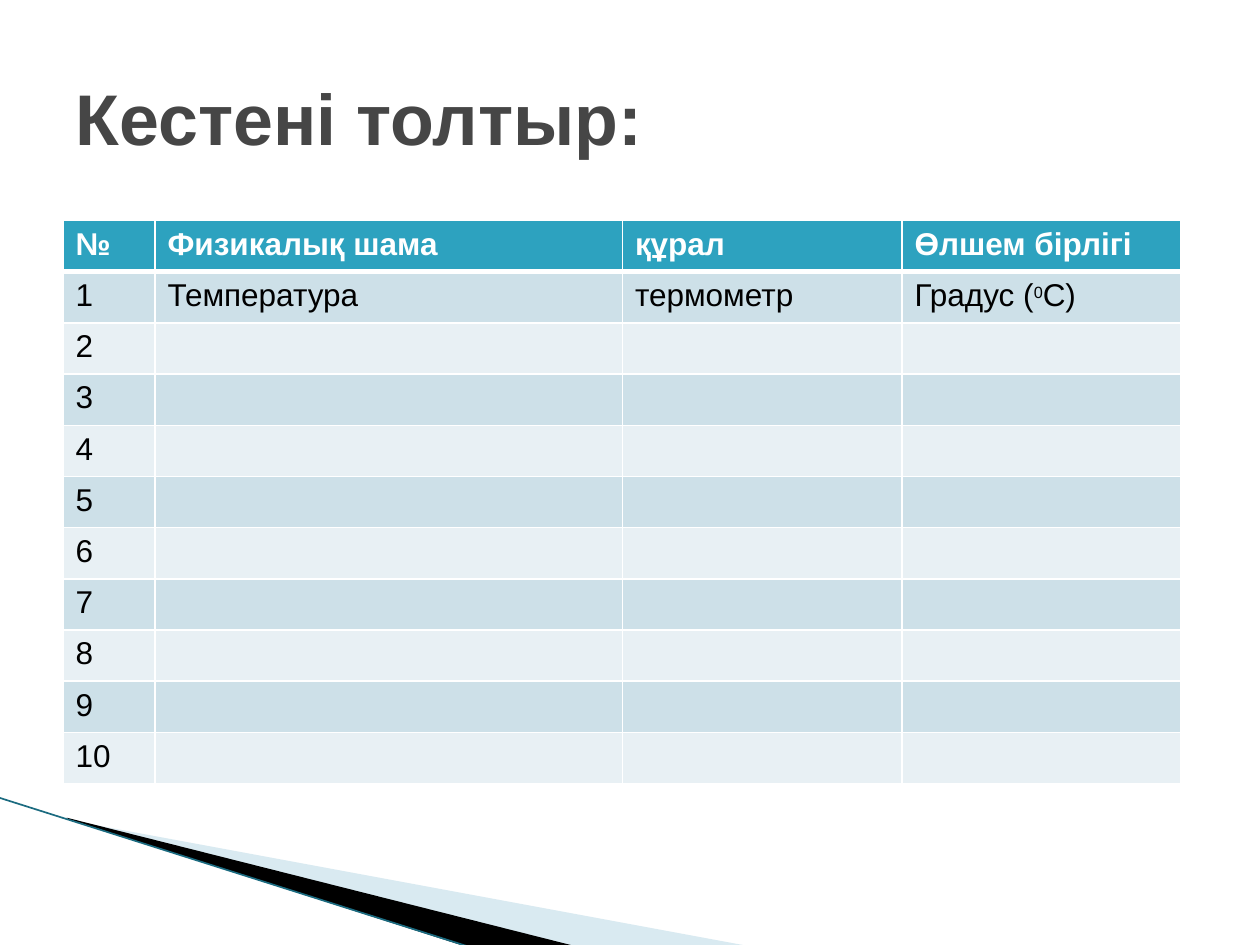
from lxml.etree import SubElement
from pptx import Presentation
from pptx.dml.color import RGBColor
from pptx.enum.shapes import MSO_CONNECTOR
from pptx.enum.text import MSO_ANCHOR, PP_ALIGN
from pptx.oxml.ns import qn
from pptx.util import Inches, Pt

# Content
TITLE = "Кестені толтыр:"
HEADER = ["№", "Физикалық шама", "құрал", "Өлшем бірлігі"]
DEGREES = ["Градус (", ("0", "super"), "С)"]
ROWS = [["1", "Температура", "термометр", DEGREES]]
ROWS += [[str(n), "", "", ""] for n in range(2, 11)]

# Theme and geometry (inches)
THEME = {
    "font": "Arial",
    "title": {"size": Pt(41), "bold": True, "color": "464646"},
    "header": {"size": Pt(18), "bold": True, "color": "FFFFFF"},
    "body": {"size": Pt(18), "bold": False, "color": "000000"},
    "super": {"size": Pt(16), "bold": False, "color": "000000"},
    "header_fill": "2DA2BF",
    "bands": ["CDE0E8", "E8F0F4"],
    "border": "FFFFFF",
    "edge": "1B6B80",
}
TITLE_BOX = (0.5, 0.3, 9, 1.25)
TABLE_BOX = (0.5, 1.75, 8.87, 4.47)
COLUMNS = [0.73, 3.71, 2.22, 2.21]
WEDGES = [  # frame, points, colour, opacity in percent
    ((0.78, 5.47, 4.16, 1.58),
     [(0.55, 6.51), (5.95, 7.51), (4.56, 7.51), (0.55, 6.5)], "A0CBDC", 40),
    ((-0.06, 6.33, 4.16, 0.92),
     [(0.53, 6.49), (4.57, 7.51), (3.72, 7.52), (0.54, 6.5)], "000000", 100),
]
EDGE = (-0.01, 6.33, 3.71, 7.51)


def box(values):
    return [Inches(v) for v in values]


def place(shape, values):
    shape.left, shape.top, shape.width, shape.height = box(values)


def format_font(font, style):
    font.name = THEME["font"]
    for name, value in THEME[style].items():
        if name == "color":
            font.color.rgb = RGBColor.from_string(value)
        else:
            setattr(font, name, value)


def set_borders(cell, widths):
    tc_pr = cell._tc.get_or_add_tcPr()
    for side in "LRTB":
        ln = SubElement(tc_pr, qn(f"a:ln{side}"), w=str(Pt(widths.get(side, 1))))
        fill = SubElement(ln, qn("a:solidFill"))
        SubElement(fill, qn("a:srgbClr"), val=THEME["border"])


def fill_cell(cell, content, style, color, widths):
    set_borders(cell, widths)
    cell.fill.solid()
    cell.fill.fore_color.rgb = RGBColor.from_string(color)
    p = cell.text_frame.paragraphs[0]
    format_font(p.font, style)
    for part in content if isinstance(content, list) else [content]:
        text, run_style = part if isinstance(part, tuple) else (part, style)
        if text:
            r = p.add_run()
            r.text = text
            format_font(r.font, run_style)
            if run_style == "super":
                r.font._element.set("baseline", "30000")


def set_frame(sp, frame):
    """Move the frame while the outline, which reaches beyond it, stays put."""
    dx, dy = sp.left - Inches(frame[0]), sp.top - Inches(frame[1])
    place(sp, frame)
    outline = next(sp._element.iter(qn("a:path")))
    outline.set("w", str(sp.width))
    outline.set("h", str(sp.height))
    for pt in outline.iter(qn("a:pt")):
        pt.set("x", str(int(pt.get("x")) + dx))
        pt.set("y", str(int(pt.get("y")) + dy))


def add_wedge(s, frame, points, color, opacity):
    start, *rest = [box(point) for point in points]
    builder = s.shapes.build_freeform(*start)
    builder.add_line_segments(rest, close=True)
    sp = builder.convert_to_shape()
    set_frame(sp, frame)
    sp.shadow.inherit = False
    sp.line.fill.background()
    sp.fill.solid()
    sp.fill.fore_color.rgb = RGBColor.from_string(color)
    if opacity < 100:
        clr = sp._element.spPr.find(qn("a:solidFill"))[0]
        SubElement(clr, qn("a:alpha"), val=str(opacity * 1000))


def main():
    prs = Presentation()
    prs.slide_width, prs.slide_height = box((10, 7.5))
    s = prs.slides.add_slide(prs.slide_layouts[5])

    # Corner decoration
    for wedge in WEDGES:
        add_wedge(s, *wedge)
    line = s.shapes.add_connector(MSO_CONNECTOR.STRAIGHT, *box(EDGE))
    line.line.color.rgb = RGBColor.from_string(THEME["edge"])
    line.line.width = Pt(0.95)
    SubElement(line._element.spPr, qn("a:effectLst"))

    # Table
    rows = [HEADER] + ROWS
    table = s.shapes.add_table(len(rows), len(COLUMNS), *box(TABLE_BOX)).table
    for column, width in zip(table.columns, COLUMNS):
        column.width = Inches(width)
    for i, row in enumerate(rows):
        style = "body" if i else "header"
        color = THEME["bands"][(i - 1) % 2] if i else THEME["header_fill"]
        widths = {0: {"B": 3}, 1: {"T": 3}}.get(i, {})
        for j, content in enumerate(row):
            fill_cell(table.cell(i, j), content, style, color, widths)

    # Title
    title = s.shapes.title
    place(title, TITLE_BOX)
    tf = title.text_frame
    tf.text = TITLE
    tf.word_wrap = True
    tf.vertical_anchor = MSO_ANCHOR.MIDDLE
    p = tf.paragraphs[0]
    p.alignment = PP_ALIGN.LEFT
    format_font(p.runs[0].font, "title")

    prs.save("out.pptx")


if __name__ == "__main__":
    main()
